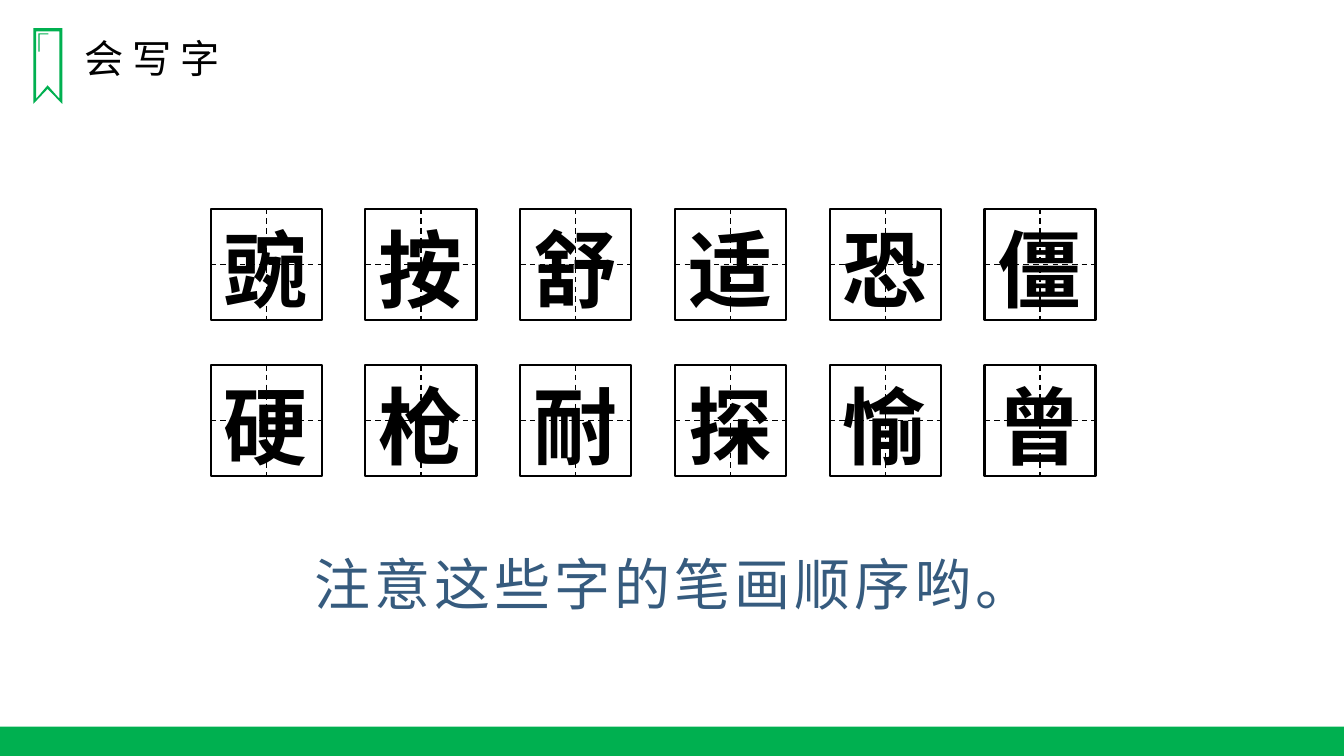
from pptx import Presentation
from pptx.dml.color import RGBColor
from pptx.enum.dml import MSO_LINE
from pptx.enum.shapes import MSO_CONNECTOR, MSO_SHAPE
from pptx.enum.text import MSO_ANCHOR, MSO_AUTO_SIZE, PP_ALIGN
from pptx.oxml.ns import qn
from pptx.util import Cm, Pt
from lxml.etree import SubElement


def rgb(value):
    return RGBColor.from_string(value)


def write(sp, text, size, color="000000", bold=False, line_spacing=1.0, spacing=0):
    tf = sp.text_frame
    tf.word_wrap = True
    tf.auto_size = MSO_AUTO_SIZE.NONE
    tf.vertical_anchor = MSO_ANCHOR.TOP
    p = tf.paragraphs[0]
    p.alignment = PP_ALIGN.LEFT
    p.line_spacing = line_spacing
    r = p.add_run()
    r.text = text
    r.font.name = "Arial"
    r.font.size = Pt(size)
    r.font.bold = bold
    r.font.color.rgb = rgb(color)
    if spacing:
        r._r.get_or_add_rPr().set("spc", str(spacing * 100))


GREEN = "00B050"

prs = Presentation()
prs.slide_width, prs.slide_height = Cm(33.87), Cm(19.05)
slide = prs.slides.add_slide(prs.slide_layouts[5])
shapes = slide.shapes

# Green bar along the bottom
bar = shapes.add_shape(MSO_SHAPE.RECTANGLE, 0, Cm(18.31), prs.slide_width, Cm(0.74))

# Bookmark: outer edge, inner edge and corner mark, in hundredths of a cm
contours = [
    [(84, 71), (84, 262), (120, 224), (157, 262), (157, 71)],
    [(91, 79), (150, 79), (150, 249), (120, 215), (91, 249)],
    [(97, 84), (97, 130), (100, 130), (100, 87), (122, 87), (122, 84)],
]
builder = shapes.build_freeform(*contours[0][0], scale=Cm(0.01))
for i, contour in enumerate(contours):
    if i:
        builder.move_to(*contour[0])
    builder.add_line_segments(contour[1:], close=True)
bookmark = builder.convert_to_shape()

for sp in (bar, bookmark):
    sp.shadow.inherit = False
    sp.fill.solid()
    sp.fill.fore_color.rgb = rgb(GREEN)
    sp.line.fill.background()

# Title
title = shapes.title
title.left, title.top, title.width, title.height = Cm(1.88), Cm(0.74), Cm(4.5), Cm(1.45)
write(title, "会 写 字", 28)

# Grid of practice squares with dashed guides
LEFT, TOP, SIDE = 5.31, 5.26, 2.8
STEP_X, STEP_Y = 3.9, 3.94
for row, characters in enumerate(["豌按舒适恐僵", "硬枪耐探愉曾"]):
    for col, character in enumerate(characters):
        x, y = LEFT + col * STEP_X, TOP + row * STEP_Y
        square = shapes.add_shape(MSO_SHAPE.RECTANGLE, Cm(x), Cm(y), Cm(SIDE), Cm(SIDE))
        square.shadow.inherit = False
        square.fill.background()
        square.line.color.rgb = rgb("000000")
        square.line.width = Pt(1.5)
        for begin, end in ((1, 3), (0, 2)):
            guide = shapes.add_connector(MSO_CONNECTOR.STRAIGHT, 0, 0, 0, 0)
            guide.begin_connect(square, begin)
            guide.end_connect(square, end)
            guide.line.color.rgb = rgb("000000")
            guide.line.width = Pt(1)
            guide.line.dash_style = MSO_LINE.DASH
            SubElement(guide._element.spPr, qn("a:effectLst"))
        label = shapes.add_textbox(Cm(x + 0.08), Cm(y + 0.1), Cm(2.26), Cm(2.82))
        write(label, character, 60, bold=True)

# Reminder under the grid
reminder = shapes.add_textbox(Cm(7.67), Cm(13.21), Cm(18.4), Cm(2.31))
write(reminder, "注意这些字的笔画顺序哟。", 40, color="365B7E", line_spacing=1.3, spacing=3)

prs.save("out.pptx")
